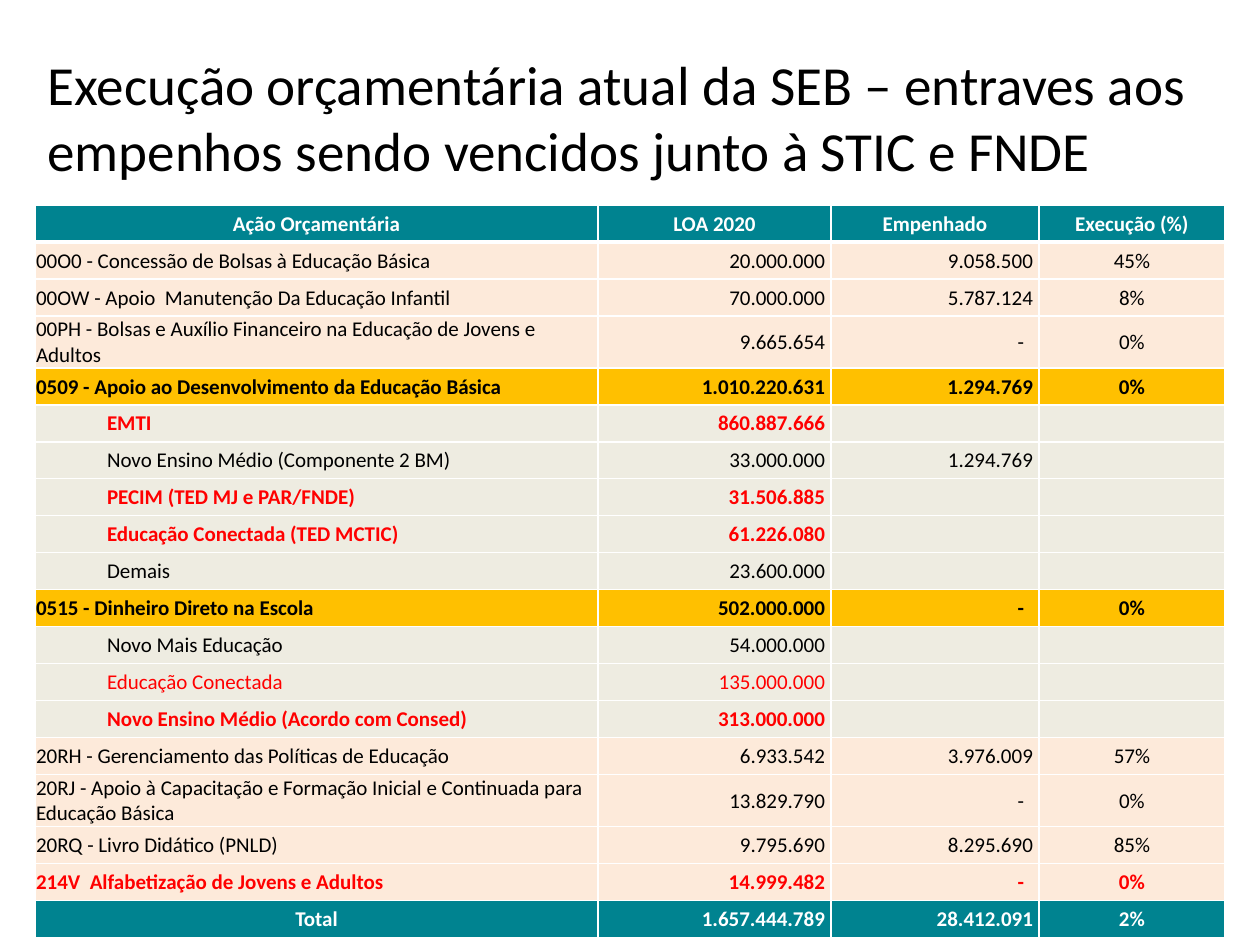
import pptx
import pptx.dml.color
import pptx.enum.text
import pptx.oxml
import pptx.oxml.ns
import pptx.util

RGBColor = pptx.dml.color.RGBColor
ALIGN = pptx.enum.text.PP_ALIGN
MIDDLE = pptx.enum.text.MSO_ANCHOR.MIDDLE

BLACK = RGBColor(0x00, 0x00, 0x00)
WHITE = RGBColor(0xFF, 0xFF, 0xFF)
RED = RGBColor(0xFF, 0x00, 0x00)
TEAL = RGBColor(0x00, 0x83, 0x90)
PEACH = RGBColor(0xFD, 0xEA, 0xDA)
AMBER = RGBColor(0xFF, 0xC0, 0x00)
SAND = RGBColor(0xEE, 0xEC, 0xE1)

FONT = "Calibri"
TITLE = ("Execução orçamentária atual da SEB – entraves aos "
         "empenhos sendo vencidos junto à STIC e FNDE")
COLUMNS = [563, 233, 208, 186]
ROW_HEIGHT, WRAPPED_HEIGHT = 37, 52
WRAPPED_ROWS = (3, 15)
BODY_ALIGN = [ALIGN.LEFT, ALIGN.RIGHT, ALIGN.RIGHT, ALIGN.CENTER]

STYLES = {
    "header": (TEAL, WHITE, True),
    "action": (PEACH, BLACK, False),
    "alert": (PEACH, RED, True),
    "group": (AMBER, BLACK, True),
    "item": (SAND, BLACK, False),
    "item red": (SAND, RED, False),
    "item alert": (SAND, RED, True),
    "total": (TEAL, WHITE, True),
}

ROWS = [
    ("header", "Ação Orçamentária", "LOA 2020", "Empenhado", "Execução (%)"),
    ("action", "00O0 - Concessão de Bolsas à Educação Básica", "20.000.000", "9.058.500", "45%"),
    ("action", "00OW - Apoio  Manutenção Da Educação Infantil", "70.000.000", "5.787.124", "8%"),
    ("action", "00PH - Bolsas e Auxílio Financeiro na Educação de Jovens e Adultos",
     "9.665.654", "-", "0%"),
    ("group", "0509 - Apoio ao Desenvolvimento da Educação Básica",
     "1.010.220.631", "1.294.769", "0%"),
    ("item alert", "EMTI", "860.887.666", "", ""),
    ("item", "Novo Ensino Médio (Componente 2 BM)", "33.000.000", "1.294.769", ""),
    ("item alert", "PECIM (TED MJ e PAR/FNDE)", "31.506.885", "", ""),
    ("item alert", "Educação Conectada (TED MCTIC)", "61.226.080", "", ""),
    ("item", "Demais", "23.600.000", "", ""),
    ("group", "0515 - Dinheiro Direto na Escola", "502.000.000", "-", "0%"),
    ("item", "Novo Mais Educação", "54.000.000", "", ""),
    ("item red", "Educação Conectada", "135.000.000", "", ""),
    ("item alert", "Novo Ensino Médio (Acordo com Consed)", "313.000.000", "", ""),
    ("action", "20RH - Gerenciamento das Políticas de Educação", "6.933.542", "3.976.009", "57%"),
    ("action", "20RJ - Apoio à Capacitação e Formação Inicial e Continuada para Educação Básica",
     "13.829.790", "-", "0%"),
    ("action", "20RQ - Livro Didático (PNLD)", "9.795.690", "8.295.690", "85%"),
    ("alert", "214V  Alfabetização de Jovens e Adultos", "14.999.482", "-", "0%"),
    ("total", "Total", "1.657.444.789", "28.412.091", "2%"),
]


def px(n):
    """Turn pixels into EMU."""
    return pptx.util.Emu(round(n * 914400 / 126))


def apply(obj, values):
    """Set attributes from a dict of format values."""
    for name, value in values.items():
        setattr(obj, name, value)


def write(p, text, size, color, bold=False):
    """Add one formatted run to a paragraph."""
    r = p.add_run()
    r.text = text
    apply(r.font, {"name": FONT, "size": pptx.util.Pt(size), "bold": bold})
    r.font.color.rgb = color


def add_title(s):
    """Add the slide title."""
    sp = s.shapes.add_textbox(px(35), px(38), px(1190), px(157))
    tf = sp.text_frame
    apply(tf, {"word_wrap": True, "vertical_anchor": MIDDLE})
    write(tf.paragraphs[0], TITLE, 31.5, BLACK)


def add_borders(cell, bottom):
    """Draw white borders with the given bottom width in points."""
    tcPr = cell._tc.get_or_add_tcPr()
    widths = {"lnL": 1, "lnR": 1, "lnT": 1, "lnB": bottom}
    for i, (tag, width) in enumerate(widths.items()):
        tcPr.insert(i, pptx.oxml.parse_xml(
            f'<a:{tag} {pptx.oxml.ns.nsdecls("a")} w="{pptx.util.Pt(width)}">'
            f'<a:solidFill><a:srgbClr val="{WHITE}"/></a:solidFill></a:{tag}>'))


def fill_cell(cell, text, kind, col):
    """Format one table cell according to its row kind and column."""
    fill, color, bold = STYLES[kind]
    indented = col == 0 and kind.startswith("item")
    centred = kind == "header" or (kind == "total" and col == 0)
    align = ALIGN.CENTER if centred else BODY_ALIGN[col]
    right = 1
    if align == ALIGN.RIGHT:
        right = 15 if text == "-" else 6
    apply(cell, {
        "margin_left": px(9 if indented else 1),
        "margin_right": px(right),
        "margin_top": px(1),
        "margin_bottom": 0,
        "vertical_anchor": MIDDLE,
    })
    cell.fill.solid()
    cell.fill.fore_color.rgb = fill
    add_borders(cell, 3 if kind == "header" else 1)
    p = cell.text_frame.paragraphs[0]
    p.alignment = align
    if indented:
        p.level = 1
        p._p.get_or_add_pPr().set("marL", str(px(63)))
    if text:
        write(p, text, 12, color, bold)
    else:
        p._p.get_or_add_endParaRPr().set("sz", "1200")


def add_budget_table(s):
    """Add the budget execution table."""
    heights = [WRAPPED_HEIGHT if i in WRAPPED_ROWS else ROW_HEIGHT for i in range(len(ROWS))]
    sp = s.shapes.add_table(len(ROWS), len(COLUMNS), px(35), px(205),
                            px(sum(COLUMNS)), px(sum(heights)))
    table = sp.table
    table.horz_banding = False
    for column, width in zip(table.columns, COLUMNS):
        column.width = px(width)
    for row, height, (kind, *texts) in zip(table.rows, heights, ROWS):
        row.height = px(height)
        for col, text in enumerate(texts):
            fill_cell(row.cells[col], text, kind, col)


def main():
    """Build the slide and save it."""
    prs = pptx.Presentation()
    apply(prs, {"slide_width": px(1260), "slide_height": px(945)})
    s = prs.slides.add_slide(prs.slide_layouts[6])
    add_title(s)
    add_budget_table(s)
    prs.save("out.pptx")


if __name__ == "__main__":
    main()
